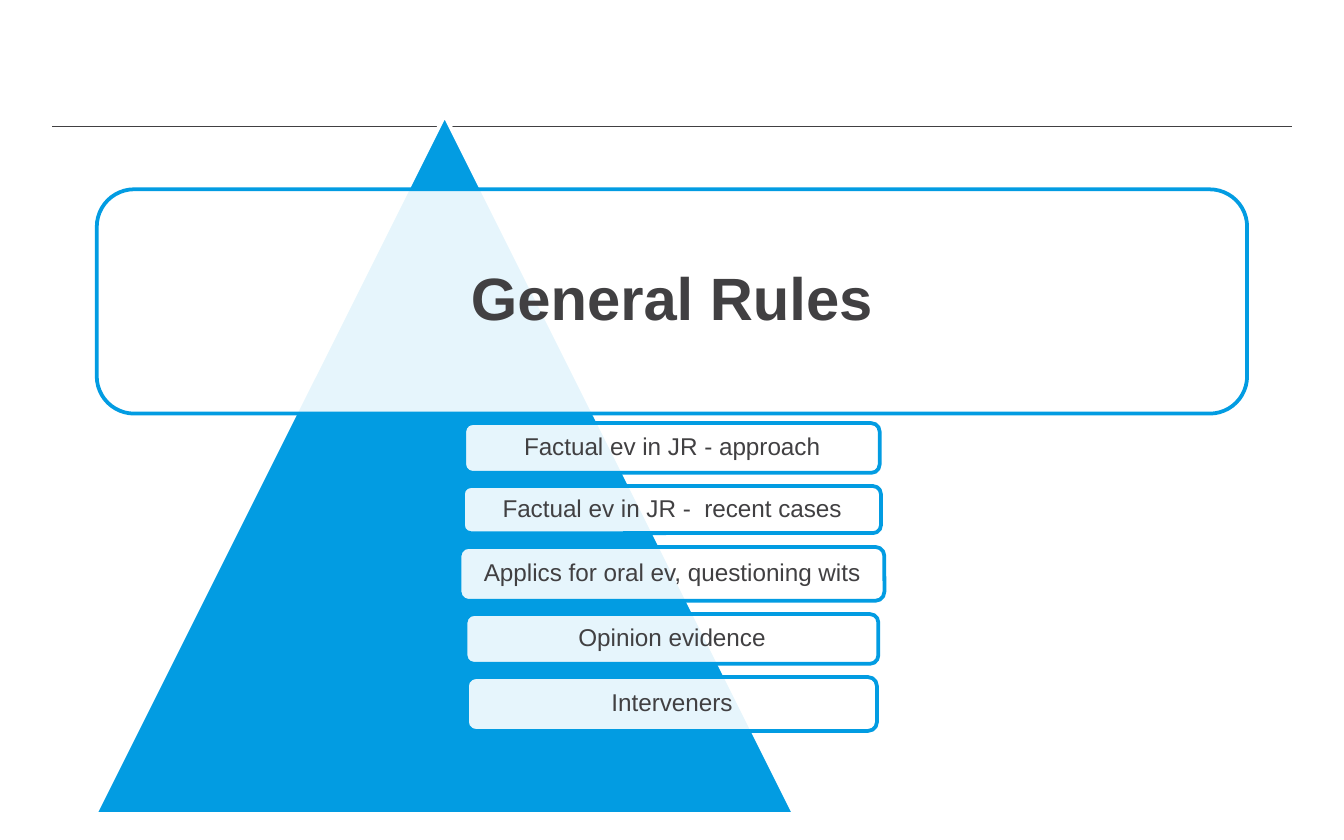
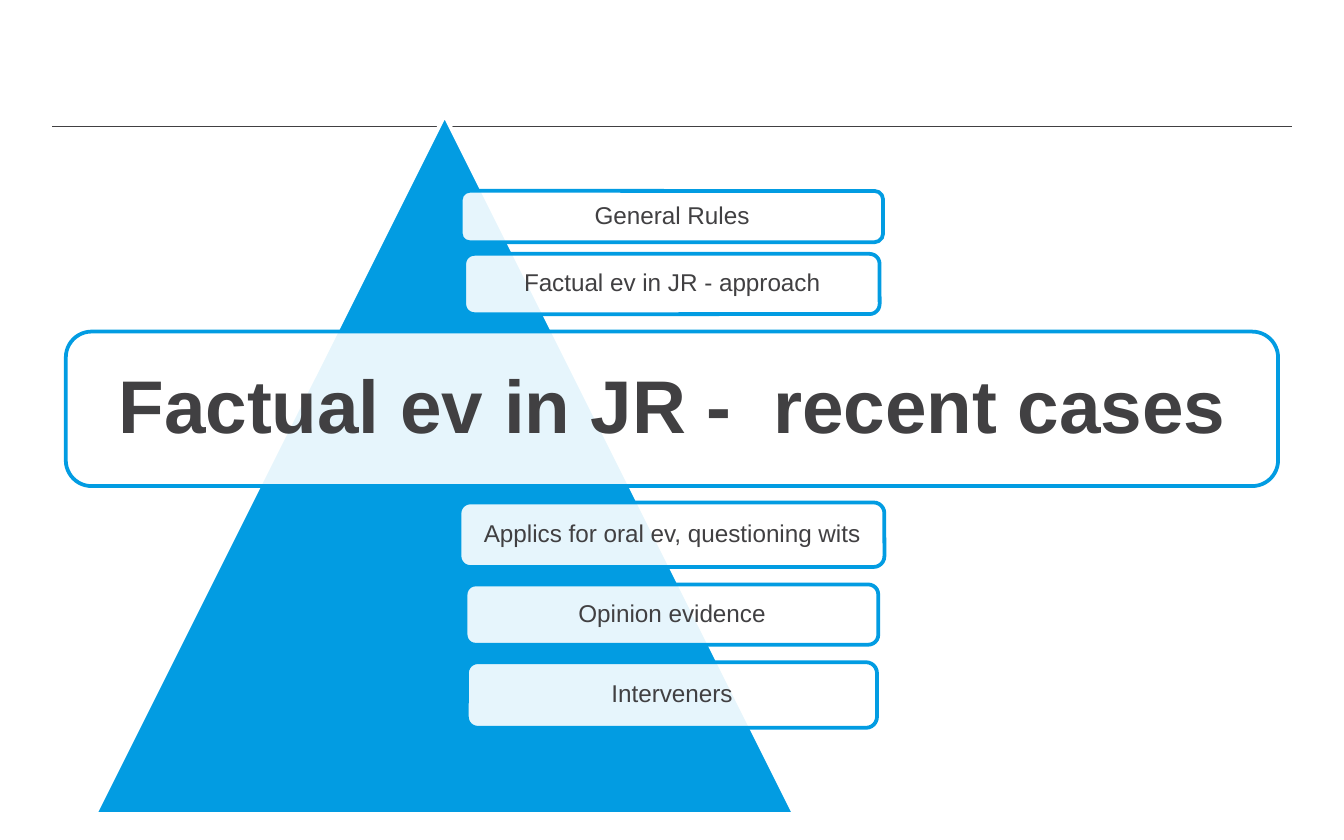
from dataclasses import dataclass

from lxml.etree import SubElement
from pptx import Presentation
from pptx.dml.color import RGBColor
from pptx.enum.shapes import MSO_CONNECTOR, MSO_SHAPE
from pptx.enum.text import MSO_ANCHOR, MSO_AUTO_SIZE, PP_ALIGN
from pptx.oxml.ns import qn
from pptx.shapes.autoshape import Shape
from pptx.slide import Slide
from pptx.util import Cm, Pt

BLUE = RGBColor(0x02, 0x9C, 0xE2)
GREY = RGBColor(0x41, 0x40, 0x42)
WHITE = RGBColor(0xFF, 0xFF, 0xFF)
FONT = "Arial"
SLIDE_WIDTH, SLIDE_HEIGHT = 25.4, 15.88
RULE_MARGIN, RULE_TOP = 0.99, 2.39
TITLE_ONLY = 5
TOPIC_SIZE = 13
TOPIC_INSET = 0.18

# Topics in order, with the width in cm of each box when it is not highlighted
TOPIC_WIDTHS = {
    "General Rules": 7.98,
    "Factual ev in JR - approach": 7.85,
    "Factual ev in JR -  recent cases": 7.9,
    "Applics for oral ev, questioning wits": 8.03,
    "Opinion evidence": 7.8,
    "Interveners": 7.75,
}


@dataclass(frozen=True)
class Band:
    """Vertical extent of one topic box, in cm."""
    top: float
    height: float


@dataclass(frozen=True)
class Agenda:
    """One agenda slide; lengths in cm, size in points."""
    current: str
    current_width: float
    current_size: int
    current_inset: float
    bands: tuple[Band, ...]


AGENDAS = (
    Agenda("General Rules", 21.74, 32, 0.53, (
        Band(3.58, 4.24), Band(8.0, 0.94), Band(9.19, 0.89),
        Band(10.34, 1.02), Band(11.61, 0.94), Band(12.8, 1.02))),
    Agenda("Factual ev in JR -  recent cases", 22.91, 40, 0.56, (
        Band(3.61, 0.97), Band(4.8, 1.14), Band(6.27, 2.92),
        Band(9.5, 1.22), Band(11.05, 1.14), Band(12.52, 1.24))),
)


def add_rule(slide: Slide) -> None:
    rule = slide.shapes.add_connector(
        MSO_CONNECTOR.STRAIGHT, Cm(RULE_MARGIN), Cm(RULE_TOP),
        Cm(SLIDE_WIDTH - RULE_MARGIN), Cm(RULE_TOP))
    rule.line.color.rgb = GREY
    rule.line.width = Pt(0.75)
    SubElement(rule.element.spPr, qn("a:effectLst"))


def add_filled_shape(slide: Slide, kind: MSO_SHAPE, left: float, top: float,
                     width: float, height: float,
                     fill: RGBColor, line: RGBColor) -> Shape:
    shape = slide.shapes.add_shape(kind, Cm(left), Cm(top), Cm(width), Cm(height))
    shape.shadow.inherit = False
    shape.fill.solid()
    shape.fill.fore_color.rgb = fill
    shape.line.color.rgb = line
    shape.line.width = Pt(2)
    return shape


def add_topic_box(slide: Slide, width: float, band: Band) -> Shape:
    """Add a centred rounded box with a 90 % opaque white fill."""
    box = add_filled_shape(slide, MSO_SHAPE.ROUNDED_RECTANGLE,
                           (SLIDE_WIDTH - width) / 2, band.top,
                           width, band.height, WHITE, BLUE)
    color = box.element.spPr.find(qn("a:solidFill")).find(qn("a:srgbClr"))
    SubElement(color, qn("a:alpha"), val="90000")
    return box


def write_topic(shape: Shape, text: str, size: int, inset: float,
                bold: bool = False) -> None:
    frame = shape.text_frame
    frame.text = text
    frame.word_wrap = True
    frame.auto_size = MSO_AUTO_SIZE.NONE
    frame.vertical_anchor = MSO_ANCHOR.MIDDLE
    frame.margin_left = frame.margin_right = Cm(inset)
    frame.margin_top = frame.margin_bottom = Cm(min(inset, TOPIC_INSET))
    paragraph = frame.paragraphs[0]
    paragraph.alignment = PP_ALIGN.CENTER
    paragraph.line_spacing = 0.9
    paragraph.font.name = FONT
    paragraph.font.size = Pt(size)
    paragraph.font.bold = bold
    paragraph.font.color.rgb = GREY


def place_title(slide: Slide, box: Shape) -> Shape:
    """Move the title placeholder onto the box, in front of it."""
    title = slide.shapes.title
    title.left, title.top = box.left, box.top
    title.width, title.height = box.width, box.height
    slide.shapes.element.append(title.element)
    return title


def add_agenda_slide(presentation: Presentation, agenda: Agenda) -> None:
    slide = presentation.slides.add_slide(presentation.slide_layouts[TITLE_ONLY])
    add_rule(slide)
    add_filled_shape(slide, MSO_SHAPE.ISOSCELES_TRIANGLE,
                     1.8, 2.18, 13.21, 13.21, BLUE, WHITE)
    for (topic, width), band in zip(TOPIC_WIDTHS.items(), agenda.bands):
        if topic == agenda.current:
            box = add_topic_box(slide, agenda.current_width, band)
            write_topic(place_title(slide, box), topic, agenda.current_size,
                        agenda.current_inset, bold=True)
        else:
            box = add_topic_box(slide, width, band)
            write_topic(box, topic, TOPIC_SIZE, TOPIC_INSET)


def main() -> None:
    presentation = Presentation()
    presentation.slide_width = Cm(SLIDE_WIDTH)
    presentation.slide_height = Cm(SLIDE_HEIGHT)
    for agenda in AGENDAS:
        add_agenda_slide(presentation, agenda)
    presentation.save("out.pptx")


if __name__ == "__main__":
    main()
